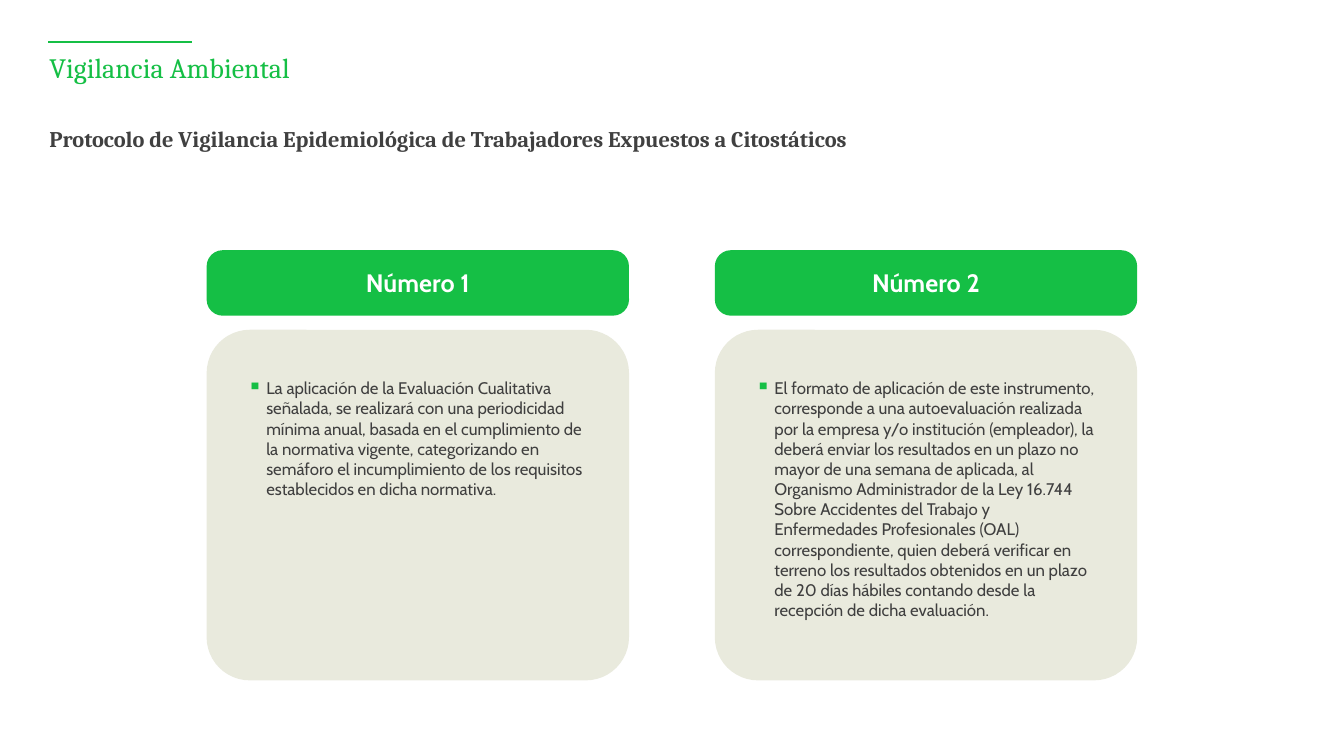
from lxml.etree import SubElement
from pptx import Presentation
from pptx.dml.color import RGBColor
from pptx.enum.shapes import MSO_CONNECTOR, MSO_SHAPE
from pptx.enum.text import MSO_ANCHOR, PP_ALIGN
from pptx.oxml.ns import qn
from pptx.util import Pt

GREEN, BEIGE, WHITE = "15BF45", "E9EADD", "FFFFFF"
HEADING_GREY, BODY_GREY = "404040", "3F3F3F"

COLUMN_LEFT, COLUMN_PITCH, COLUMN_WIDTH = 147.6, 363, 301.7
TEXT_INSET, TEXT_WIDTH = 29.1, 243.4

COLUMNS = [
    ("Número 1",
     "La aplicación de la Evaluación Cualitativa señalada, se realizará con una "
     "periodicidad mínima anual, basada en el cumplimiento de la normativa vigente, "
     "categorizando en semáforo el incumplimiento de los requisitos establecidos en "
     "dicha normativa."),
    ("Número 2",
     "El formato de aplicación de este instrumento, corresponde a una autoevaluación "
     "realizada por la empresa y/o institución (empleador), la deberá enviar los "
     "resultados en un plazo no mayor de una semana de aplicada, al Organismo "
     "Administrador de la Ley 16.744 Sobre Accidentes del Trabajo y Enfermedades "
     "Profesionales (OAL) correspondiente, quien deberá verificar en terreno los "
     "resultados obtenidos en un plazo de 20 días hábiles contando desde la "
     "recepción de dicha evaluación."),
]


def rgb(value):
    return RGBColor.from_string(value)


def set_font(paragraph, name, size, color, bold=False):
    font = paragraph.font
    font.name, font.size, font.bold = name, Pt(size), bold
    font.color.rgb = rgb(color)


def add_text(slide, left, top, width, height, text):
    frame = slide.shapes.add_textbox(Pt(left), Pt(top), Pt(width), Pt(height)).text_frame
    frame.word_wrap = True
    frame.margin_left = frame.margin_top = frame.margin_right = frame.margin_bottom = 0
    paragraph = frame.paragraphs[0]
    paragraph.text = text
    return paragraph


def add_heading(slide, top, height, text, size, color, bold=False):
    heading = add_text(slide, 35.3, top, 777, height, text)
    heading.line_spacing = 0.9
    set_font(heading, "Cambria", size, color, bold)


def add_panel(slide, left, top, height, rounding, color):
    panel = slide.shapes.add_shape(MSO_SHAPE.ROUNDED_RECTANGLE, Pt(left), Pt(top),
                                   Pt(COLUMN_WIDTH), Pt(height))
    panel.adjustments[0] = rounding
    panel.shadow.inherit = False
    panel.fill.solid()
    panel.fill.fore_color.rgb = rgb(color)
    panel.line.fill.background()
    return panel


def add_bullet(paragraph, indent):
    properties = paragraph._p.get_or_add_pPr()
    properties.set("marL", str(Pt(indent)))
    properties.set("indent", str(-Pt(indent)))
    bullet_color = SubElement(properties, qn("a:buClr"))
    SubElement(bullet_color, qn("a:srgbClr"), val=GREEN)
    SubElement(properties, qn("a:buSzPct"), val="123000")
    SubElement(properties, qn("a:buChar"), char="▪")


def add_accent_line(slide):
    accent = slide.shapes.add_connector(MSO_CONNECTOR.STRAIGHT,
                                        Pt(34.6), Pt(30.2), Pt(136.8), Pt(30.2))
    accent.line.color.rgb = rgb(GREEN)
    accent.line.width = Pt(1.75)
    SubElement(accent._element.spPr, qn("a:effectLst"))


def add_column(slide, left, title, body):
    add_panel(slide, left, 235.6, 250.4, 0.123, BEIGE)

    # Column header
    header = add_panel(slide, left, 178.7, 46.8, 0.245, GREEN).text_frame
    header.vertical_anchor = MSO_ANCHOR.MIDDLE
    label = header.paragraphs[0]
    label.text = title
    label.alignment = PP_ALIGN.CENTER
    set_font(label, "Cabin", 18, WHITE, bold=True)

    # Bulleted explanation
    explanation = add_text(slide, left + TEXT_INSET, 270, TEXT_WIDTH, 178.6, body)
    add_bullet(explanation, 13.5)
    set_font(explanation, "Cabin", 12, BODY_GREY)


def main():
    prs = Presentation()
    prs.slide_width, prs.slide_height = Pt(960), Pt(540)
    slide = prs.slides.add_slide(prs.slide_layouts[6])

    # Title area
    add_accent_line(slide)
    add_heading(slide, 38.9, 41, "Vigilancia Ambiental", 20, GREEN)
    add_heading(slide, 91.4, 28.1,
                "Protocolo de Vigilancia Epidemiológica de Trabajadores Expuestos a Citostáticos",
                16, HEADING_GREY, bold=True)

    # Two numbered columns
    for index, (title, body) in enumerate(COLUMNS):
        add_column(slide, COLUMN_LEFT + index * COLUMN_PITCH, title, body)

    prs.save("out.pptx")


if __name__ == "__main__":
    main()
